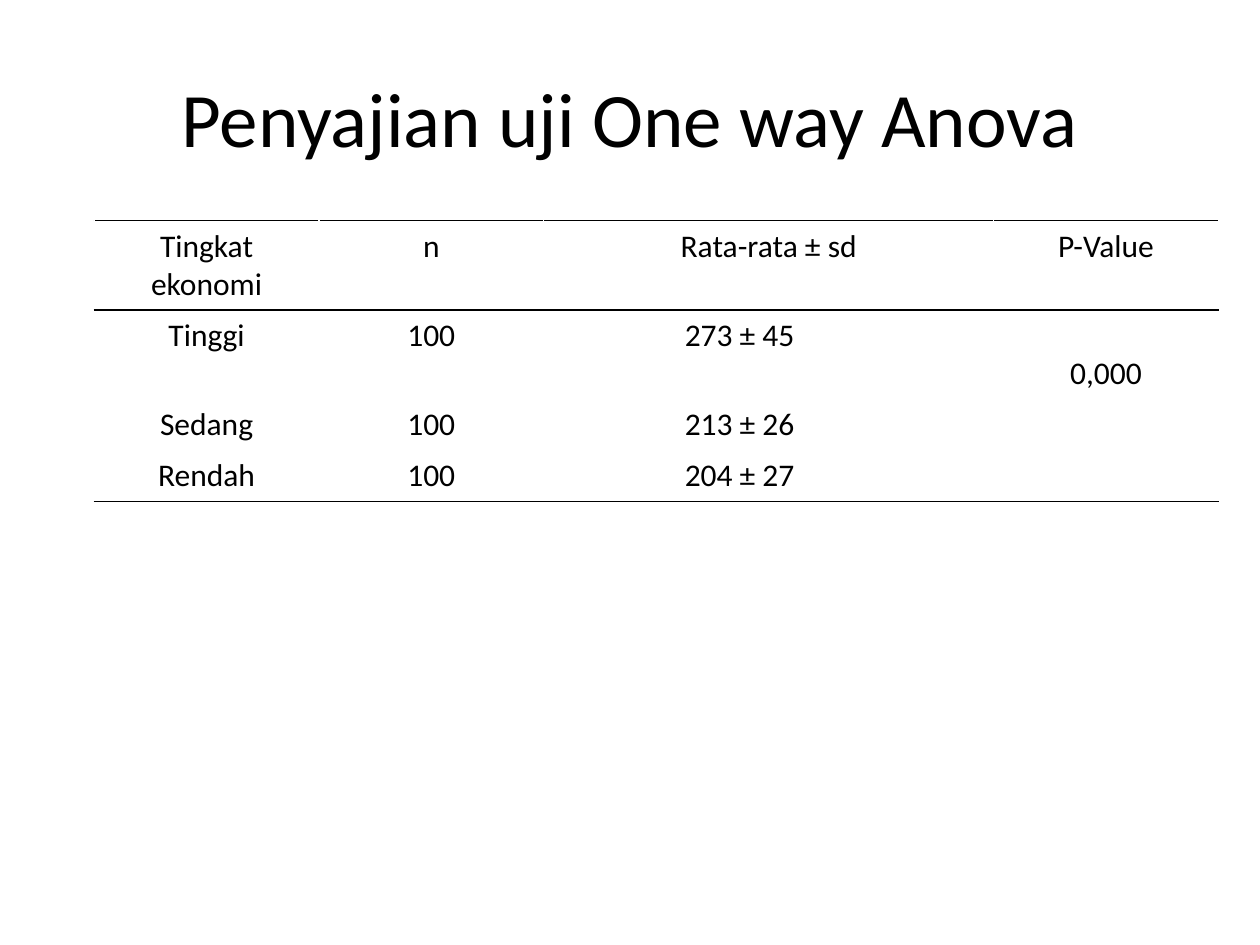
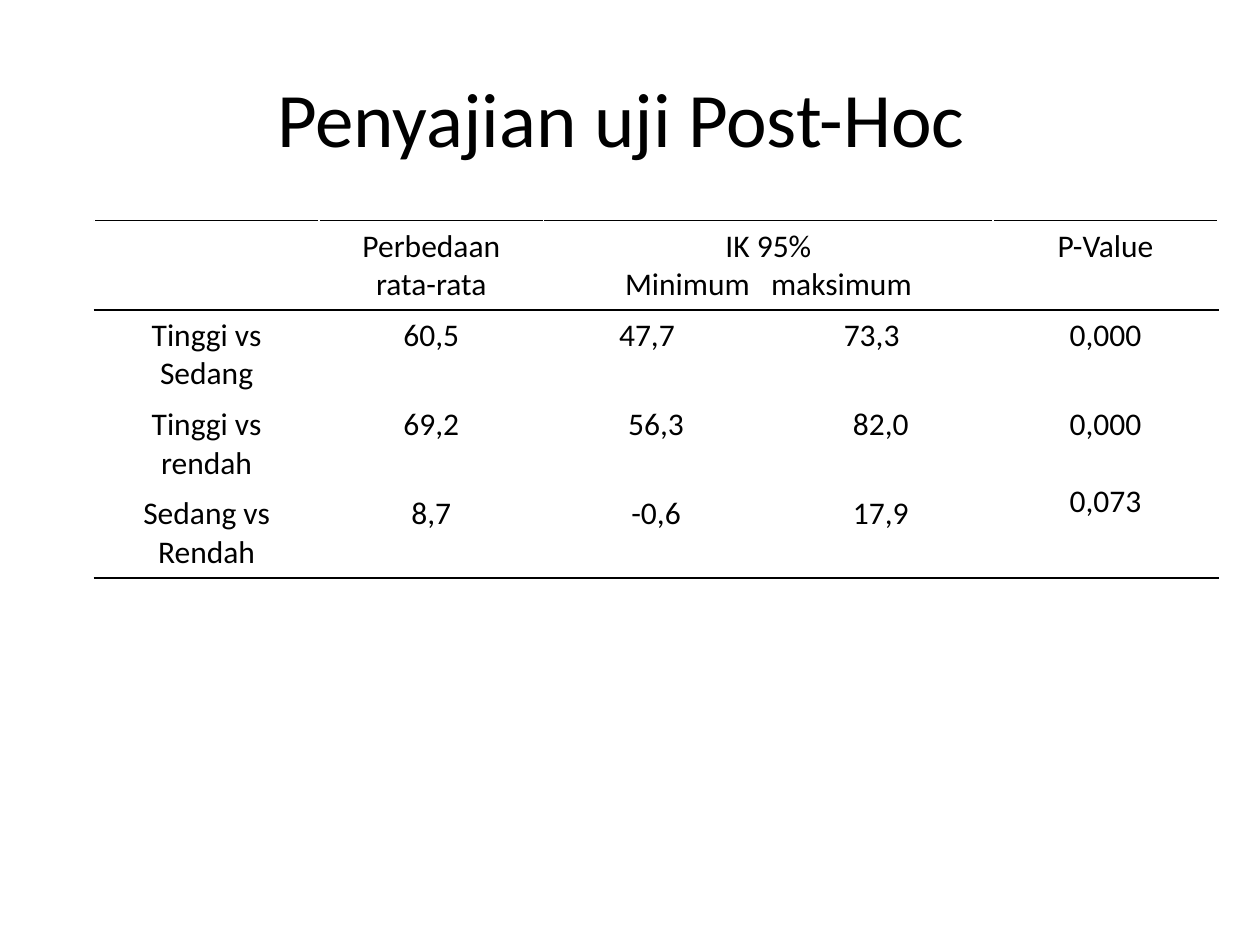
from dataclasses import dataclass

from lxml.etree import SubElement
from pptx import Presentation
from pptx.dml.color import RGBColor
from pptx.enum.text import MSO_ANCHOR, PP_ALIGN
from pptx.oxml.ns import qn
from pptx.util import Cm, Pt


@dataclass(frozen=True)
class Theme:
    font: str = "Calibri"
    ink: str = "000000"
    paper: str = "FFFFFF"
    title_size: int = 44
    body_size: int = 18
    line_width: int = 1
    plain_table: str = "{2D5ABB26-0587-4C30-8999-92F81FD0307C}"


THEME = Theme()
TITLE_BOX = (1.27, 0.76, 22.86, 3.18)  # left, top, width, height in cm
TABLE_BOX = (1.9, 4.45)  # left, top in cm
ROW_TALL, ROW_SHORT = 1.8, 1.03

ANOVA_ROWS = [
    ["Tingkat ekonomi", "n", "Rata-rata ± sd", "", "P-Value"],
    ["Tinggi", "100", "", "273 ± 45", "0,000"],
    ["Sedang", "100", "", "213 ± 26", ""],
    ["Rendah", "100", "", "204 ± 27", ""],
]
POST_HOC_ROWS = [
    ["", "Perbedaan rata-rata", "IK 95%\nMinimum", "", "P-Value"],
    ["Tinggi vs Sedang", "60,5", "47,7", "73,3", "0,000"],
    ["Tinggi vs rendah", "69,2", "56,3", "82,0", "0,000\n0,073"],
    ["Sedang vs Rendah", "8,7", "-0,6", "17,9", ""],
]


def style_paragraph(para, size, align=PP_ALIGN.CENTER):
    para.alignment = align
    para.font.name = THEME.font
    para.font.size = Pt(size)
    para.font.color.rgb = RGBColor.from_string(THEME.ink)


def add_title(page, text, box):
    frame = page.shapes.add_textbox(*map(Cm, box)).text_frame
    frame.word_wrap = True
    frame.vertical_anchor = MSO_ANCHOR.MIDDLE
    frame.text = text
    style_paragraph(frame.paragraphs[0], THEME.title_size)


def set_borders(cell, **colours):
    """Draw the cell's sides, given in the order L, R, T, B."""
    properties = cell._tc.get_or_add_tcPr()
    for side, colour in colours.items():
        line = SubElement(properties, qn(f"a:ln{side}"), w=str(Pt(THEME.line_width)))
        fill = SubElement(line, qn("a:solidFill"))
        SubElement(fill, qn("a:srgbClr"), val=colour)


def add_result_table(page, rows, widths, heights, box):
    left, top = box
    frame = page.shapes.add_table(
        len(rows), len(widths), Cm(left), Cm(top), Cm(sum(widths)), Cm(sum(heights)))
    table = frame.table
    table.horz_banding = table.first_row = False
    table._tbl.tblPr.find(qn("a:tableStyleId")).text = THEME.plain_table
    for column, width in zip(table.columns, widths):
        column.width = Cm(width)
    for row, height in zip(table.rows, heights):
        row.height = Cm(height)

    # Shared merges: the heading over two columns and the last P-values
    table.cell(0, 2).merge(table.cell(0, 3))
    table.cell(2, 4).merge(table.cell(3, 4))

    last = len(rows) - 1
    for row_index, texts in enumerate(rows):
        for column_index, text in enumerate(texts):
            cell = table.cell(row_index, column_index)
            bottom_row = row_index + (cell.span_height - 1 if cell.is_merge_origin else 0)
            # Rules above and below the heading, and under the last row
            if row_index != 1:
                set_borders(
                    cell, L=THEME.paper, R=THEME.paper,
                    T=THEME.ink if row_index == 0 else THEME.paper,
                    B=THEME.ink if bottom_row in (0, last) else THEME.paper)
            cell.fill.background()
            if not cell.is_spanned:
                cell.text = text
                for para in cell.text_frame.paragraphs:
                    style_paragraph(para, THEME.body_size)
    return table


def build_anova(page):
    add_title(page, "Penyajian uji One way Anova", TITLE_BOX)
    table = add_result_table(
        page, ANOVA_ROWS, [4.53, 4.53, 2.59, 6.48, 4.53],
        [ROW_TALL, ROW_TALL, ROW_SHORT, ROW_SHORT], TABLE_BOX)
    for row_index in range(1, 4):
        para = table.cell(row_index, 3).text_frame.paragraphs[0]
        para.alignment = PP_ALIGN.LEFT
    # The P-value sits one line lower
    table.cell(1, 4).margin_top = Cm(0.9)


def build_post_hoc(page):
    add_title(page, "Penyajian uji Post-Hoc ", TITLE_BOX)
    table = add_result_table(
        page, POST_HOC_ROWS, [4.53] * 5, [ROW_TALL] * 4, TABLE_BOX)
    # Widened gap between the two limits in the heading
    para = table.cell(0, 2).text_frame.paragraphs[1]
    gap = para.add_run()
    gap.text = " "
    gap._r.get_or_add_rPr().set("spc", "800")
    para.add_run().text = "maksimum"
    # Indented limits of the first comparison
    for column_index in (2, 3):
        cell = table.cell(1, column_index)
        cell.margin_left = Cm(1.52)
        cell.text_frame.paragraphs[0].alignment = PP_ALIGN.LEFT
    # One line of space between the merged P-values
    table.cell(2, 4).text_frame.paragraphs[1].space_before = Pt(22)


def main():
    deck = Presentation()
    deck.slide_width, deck.slide_height = Cm(25.4), Cm(19.05)
    for build in (build_anova, build_post_hoc):
        build(deck.slides.add_slide(deck.slide_layouts[6]))
    deck.save("out.pptx")


if __name__ == "__main__":
    main()
